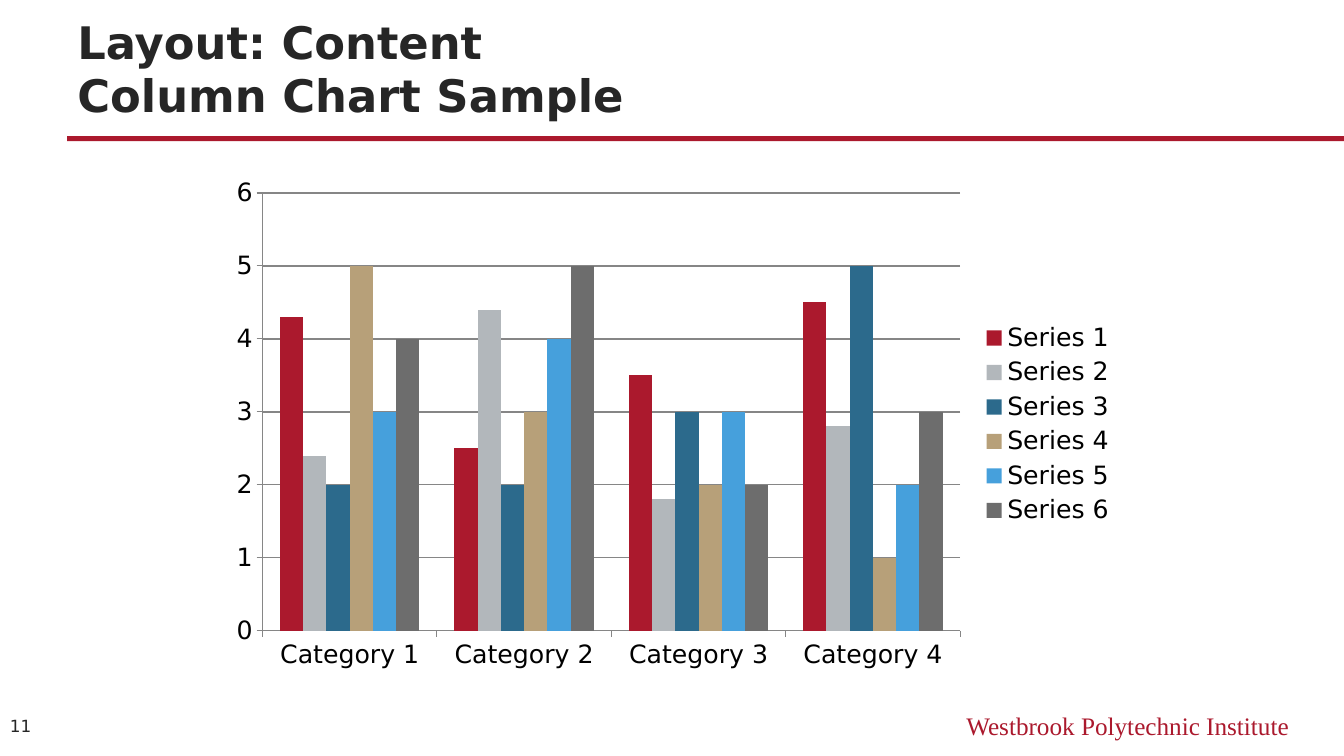
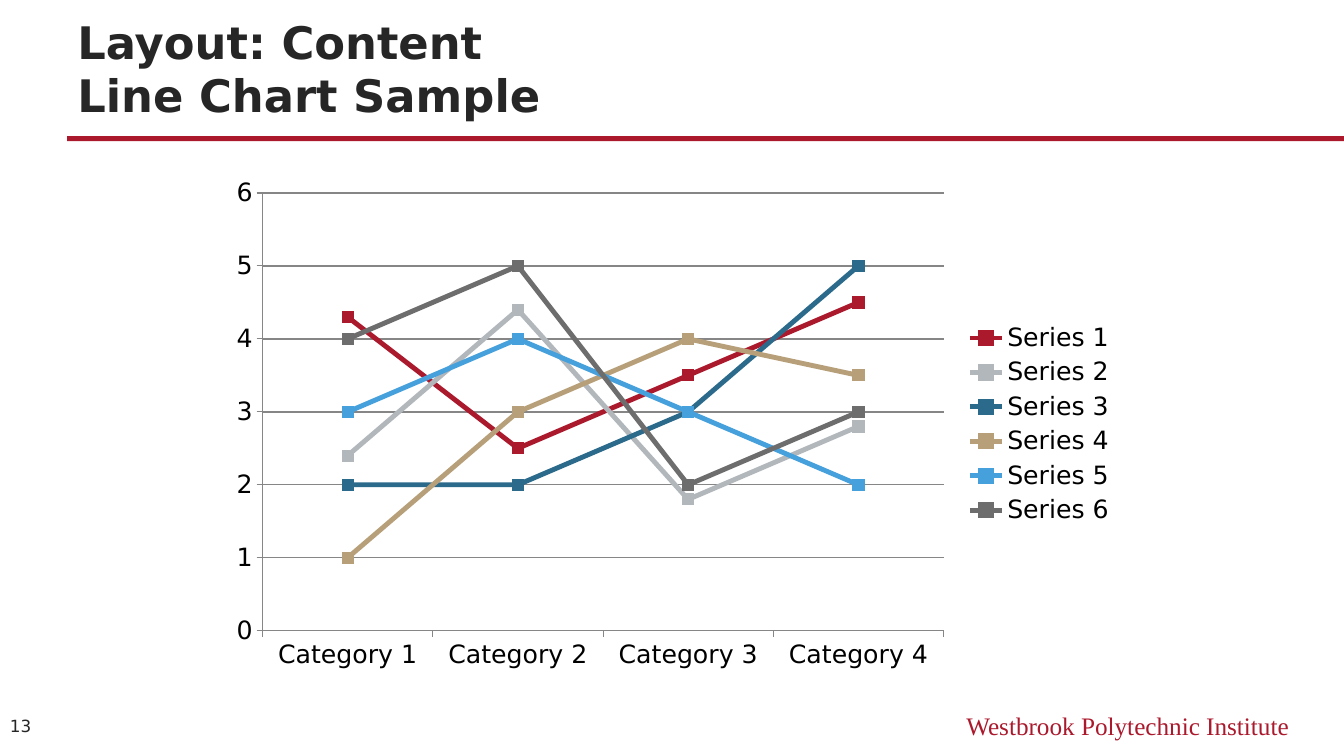
"""Build two chart sample slides in one shared style."""
from pptx import Presentation
from pptx.chart.data import CategoryChartData
from pptx.dml.color import RGBColor
from pptx.enum.chart import XL_CHART_TYPE, XL_LEGEND_POSITION, XL_MARKER_STYLE, XL_TICK_MARK
from pptx.enum.shapes import MSO_SHAPE
from pptx.enum.text import MSO_ANCHOR, MSO_AUTO_SIZE, PP_ALIGN
from pptx.util import Inches, Pt

CRIMSON = RGBColor(0xAB, 0x19, 0x2D)
SILVER = RGBColor(0xB2, 0xB7, 0xBB)
TEAL = RGBColor(0x2C, 0x6A, 0x8C)
SAND = RGBColor(0xB7, 0xA0, 0x79)
SKY = RGBColor(0x46, 0xA0, 0xDC)
SLATE = RGBColor(0x6D, 0x6D, 0x6D)
INK = RGBColor(0x26, 0x26, 0x26)
BLACK = RGBColor(0, 0, 0)
AXIS_GRAY = RGBColor(0x86, 0x86, 0x86)
SERIES_COLORS = [CRIMSON, SILVER, TEAL, SAND, SKY, SLATE]

SANS = "DejaVu Sans"
SERIF = "Times New Roman"
COLUMNS, ROWS = 20, 30
TITLE_ONLY = 5

CATEGORIES = [f"Category {number}" for number in range(1, 5)]
COLUMN_VALUES = [
    (4.3, 2.5, 3.5, 4.5),
    (2.4, 4.4, 1.8, 2.8),
    (2, 2, 3, 5),
    (5, 3, 2, 1),
    (3, 4, 3, 2),
    (4, 5, 2, 3),
]
LINE_VALUES = [*COLUMN_VALUES[:3], (1, 3, 4, 3.5), *COLUMN_VALUES[4:]]


class SlideBuilder:
    """Hold the shared style and the current slide."""

    def __init__(self):
        self.deck = Presentation()
        self.deck.slide_width = Inches(13.33)
        self.deck.slide_height = Inches(7.5)
        self.page = None

    def place(self, column, row, columns, rows):
        """Turn grid units into left, top, width and height."""
        across = self.deck.slide_width / COLUMNS
        down = self.deck.slide_height / ROWS
        return (round(column * across), round(row * down),
                round(columns * across), round(rows * down))

    def style_font(self, font, name, size, color, bold=False):
        """Apply face, size, colour and weight."""
        font.name = name
        font.size = Pt(size)
        font.color.rgb = color
        font.bold = bold

    def start_page(self, title, number):
        """Add a slide with its title, rule, footer and number."""
        self.page = self.deck.slides.add_slide(self.deck.slide_layouts[TITLE_ONLY])
        self.add_rule()
        self.add_text("Westbrook Polytechnic Institute", (12, 28, 7.33, 1.6),
                      SERIF, 18, CRIMSON, PP_ALIGN.RIGHT, MSO_ANCHOR.TOP)
        self.add_title(title)
        self.add_text(str(number), (0, 27.96, 1, 1.72),
                      SANS, 12, INK, PP_ALIGN.LEFT, MSO_ANCHOR.MIDDLE)

    def add_rule(self):
        """Add the band below the title."""
        rule = self.page.shapes.add_shape(MSO_SHAPE.RECTANGLE, *self.place(1, 5.4, 19, 0.2))
        rule.shadow.inherit = False
        rule.fill.solid()
        rule.fill.fore_color.rgb = CRIMSON
        rule.line.fill.background()

    def add_title(self, text):
        """Fill and format the title placeholder."""
        title = self.page.shapes.title
        title.left, title.top, title.width, title.height = self.place(1, 1.52, 18, 3.52)
        frame = title.text_frame
        frame.auto_size = MSO_AUTO_SIZE.NONE
        frame.word_wrap = True
        frame.vertical_anchor = MSO_ANCHOR.BOTTOM
        para = frame.paragraphs[0]
        para.text = text
        para.alignment = PP_ALIGN.LEFT
        self.style_font(para.font, SANS, 32, INK, bold=True)

    def add_text(self, text, area, face, size, color, alignment, anchor):
        """Add a wrapped one-paragraph text box."""
        box = self.page.shapes.add_textbox(*self.place(*area))
        frame = box.text_frame
        frame.word_wrap = True
        frame.vertical_anchor = anchor
        para = frame.paragraphs[0]
        para.text = text
        para.alignment = alignment
        self.style_font(para.font, face, size, color)

    def add_chart(self, kind, rows):
        """Add a chart with shared fonts, axes and legend."""
        data = CategoryChartData()
        data.categories = CATEGORIES
        for number, values in enumerate(rows, start=1):
            data.add_series(f"Series {number}", values)
        area = self.place(3.25, 6.67, 13.5, 20.33)
        chart = self.page.shapes.add_chart(kind, *area, data).chart
        chart.has_title = False
        self.style_font(chart.font, SANS, 18, BLACK)
        chart.has_legend = True
        chart.legend.position = XL_LEGEND_POSITION.RIGHT
        chart.legend.include_in_layout = False
        for axis in (chart.category_axis, chart.value_axis):
            axis.major_tick_mark = XL_TICK_MARK.OUTSIDE
            axis.minor_tick_mark = XL_TICK_MARK.NONE
            self.style_line(axis.format.line, AXIS_GRAY, 0.75)
        scale = chart.value_axis
        scale.minimum_scale, scale.maximum_scale, scale.major_unit = 0, 6, 1
        scale.has_major_gridlines = True
        self.style_line(scale.major_gridlines.format.line, AXIS_GRAY, 1)
        plot = chart.plots[0]
        plot.vary_by_categories = False
        return plot

    def style_line(self, line, color, width):
        """Set the colour and width of a line."""
        line.color.rgb = color
        line.width = Pt(width)

    def add_column_chart(self, rows):
        """Add a clustered column chart."""
        plot = self.add_chart(XL_CHART_TYPE.COLUMN_CLUSTERED, rows)
        plot.gap_width = 150
        plot.overlap = 0
        for series, color in zip(plot.series, SERIES_COLORS):
            series.format.fill.solid()
            series.format.fill.fore_color.rgb = color

    def add_line_chart(self, rows):
        """Add a line chart with square markers."""
        plot = self.add_chart(XL_CHART_TYPE.LINE_MARKERS, rows)
        for series, color in zip(plot.series, SERIES_COLORS):
            series.smooth = False
            self.style_line(series.format.line, color, 3.5)
            marker = series.marker
            marker.style = XL_MARKER_STYLE.SQUARE
            marker.size = 8
            marker.format.fill.solid()
            marker.format.fill.fore_color.rgb = color
            self.style_line(marker.format.line, color, 0.75)


def main():
    """Build and save the deck."""
    builder = SlideBuilder()
    builder.start_page("Layout: Content\vColumn Chart Sample", 11)
    builder.add_column_chart(COLUMN_VALUES)
    builder.start_page("Layout: Content\vLine Chart Sample", 13)
    builder.add_line_chart(LINE_VALUES)
    builder.deck.save("out.pptx")


if __name__ == "__main__":
    main()
